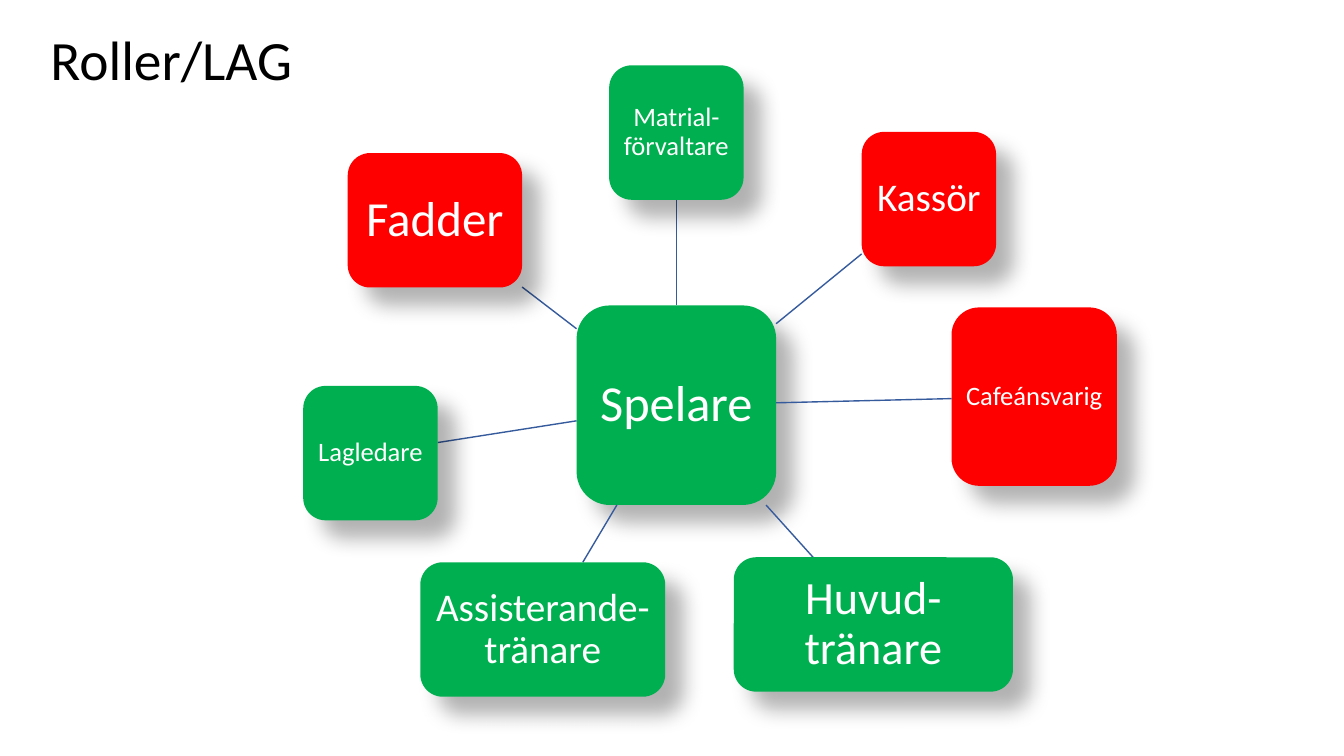
from collections import namedtuple

from lxml import etree
from pptx import Presentation
from pptx.dml.color import RGBColor
from pptx.enum.shapes import MSO_CONNECTOR as Connector, MSO_SHAPE as Shape
from pptx.enum.text import MSO_ANCHOR as Anchor, MSO_AUTO_SIZE as AutoSize, PP_ALIGN as Align
from pptx.oxml import parse_xml
from pptx.oxml.ns import nsdecls, qn
from pptx.util import Inches, Pt

# Grid of 160 columns by 90 rows, twelve cells to the inch
CELLS_PER_INCH = 12
FONT = "Calibri"
GREEN, RED, BLUE = "00B050", "FF0000", "365B9D"
WHITE, BLACK = "FFFFFF", "000000"
TOP, BOTTOM = 0, 2

# Centre column and row, width and height in cells, text size and inset
Role = namedtuple("Role", "name x y width height fill size inset")
PLAYER = Role("Spelare", 80.52, 48.24, 23.76, 23.76, GREEN, 36, 0.1)
ROLES = [
    Role("Matrial-förvaltare", 80.52, 15.78, 16, 16, GREEN, 19, 0.05),
    Role("Kassör", 110.58, 23.7, 16, 16, RED, 28, 0.08),
    Role("Cafeánsvarig", 123.12, 47.22, 19.68, 21.24, RED, 19, 0.05),
    Role("Huvud-tränare", 103.98, 74.34, 33.24, 16, GREEN, 33, 0.09),
    Role("Assisterande-tränare", 64.62, 74.94, 29.16, 16, GREEN, 28, 0.08),
    Role("Lagledare", 44.1, 53.94, 16, 16, GREEN, 19, 0.05),
    Role("Fadder", 51.78, 26.22, 20.76, 16, RED, 35, 0.1),
]


def cells(count):
    return Inches(count / CELLS_PER_INCH)


def paint(color_format, value):
    color_format.rgb = RGBColor.from_string(value)


def write(frame, text, size, color, align):
    """Put one formatted paragraph in a text frame."""
    frame.text = text
    frame.word_wrap = True
    frame.auto_size = AutoSize.NONE
    frame.vertical_anchor = Anchor.MIDDLE
    para = frame.paragraphs[0]
    para.alignment = align
    para.line_spacing = 0.9
    span = para.runs[0]
    span.font.name = FONT
    span.font.size = Pt(size)
    paint(span.font.color, color)


def add_title(page, text):
    title = page.shapes.title
    title.left, title.top = cells(4.8), 0
    title.width, title.height = cells(32.28), cells(15)
    write(title.text_frame, text, 39.6, BLACK, Align.LEFT)


def cast_shadow(box):
    box.shadow.inherit = False
    effects = box._element.spPr.find(qn("a:effectLst"))
    effects.append(parse_xml(
        f'<a:outerShdw {nsdecls("a")} blurRad="{Pt(15)}" dist="{Pt(18)}" '
        f'dir="2700000" rotWithShape="0"><a:srgbClr val="{BLACK}">'
        '<a:alpha val="30000"/></a:srgbClr></a:outerShdw>'))


def add_role(page, role):
    box = page.shapes.add_shape(
        Shape.ROUNDED_RECTANGLE,
        cells(role.x - role.width / 2), cells(role.y - role.height / 2),
        cells(role.width), cells(role.height))
    box.fill.solid()
    paint(box.fill.fore_color, role.fill)
    box.line.fill.background()
    cast_shadow(box)
    frame = box.text_frame
    frame.margin_left = frame.margin_right = Inches(role.inset)
    frame.margin_top = frame.margin_bottom = Inches(role.inset)
    write(frame, role.name, role.size, WHITE, Align.CENTER)
    return box


def edge_point(start, target):
    """Where the line between two centres leaves the start box."""
    across, down = target.x - start.x, target.y - start.y
    share = 1 / max(2 * abs(across) / start.width, 2 * abs(down) / start.height)
    return cells(start.x + across * share), cells(start.y + down * share)


def add_spoke(page, hub, role):
    line = page.shapes.add_connector(
        Connector.STRAIGHT, *edge_point(hub, role), *edge_point(role, hub))
    paint(line.line.color, BLUE)
    line.line.width = Pt(1)
    etree.SubElement(line._element.spPr, qn("a:effectLst"))
    return line


def main():
    deck = Presentation()
    deck.slide_width, deck.slide_height = cells(160), cells(90)
    page = deck.slides.add_slide(deck.slide_layouts[5])
    add_title(page, "Roller/LAG")

    # Hub with one spoke and one box for each role
    hub_box = add_role(page, PLAYER)
    for role in ROLES:
        spoke = add_spoke(page, PLAYER, role)
        box = add_role(page, role)
        # Only the box straight above meets the middle of a side
        if role.x == PLAYER.x:
            spoke.begin_connect(hub_box, TOP)
            spoke.end_connect(box, BOTTOM)

    deck.save("out.pptx")


if __name__ == "__main__":
    main()
